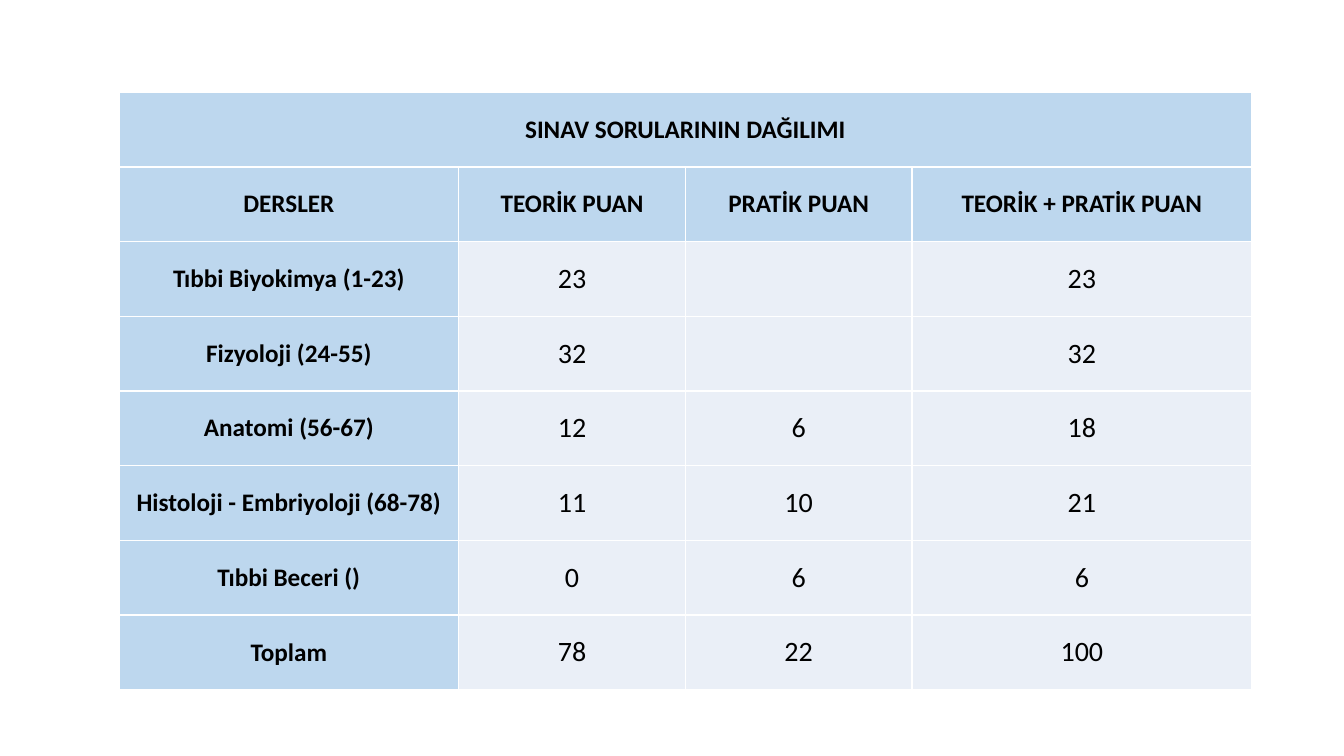
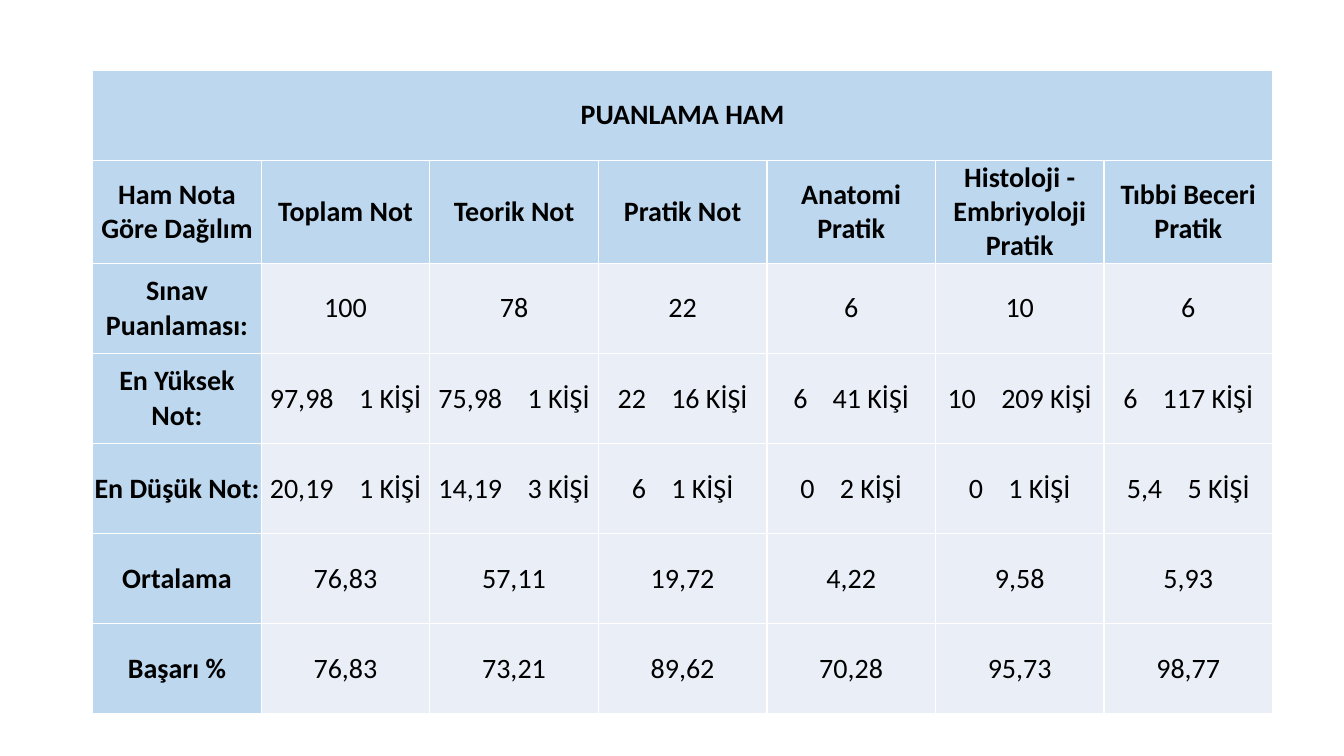
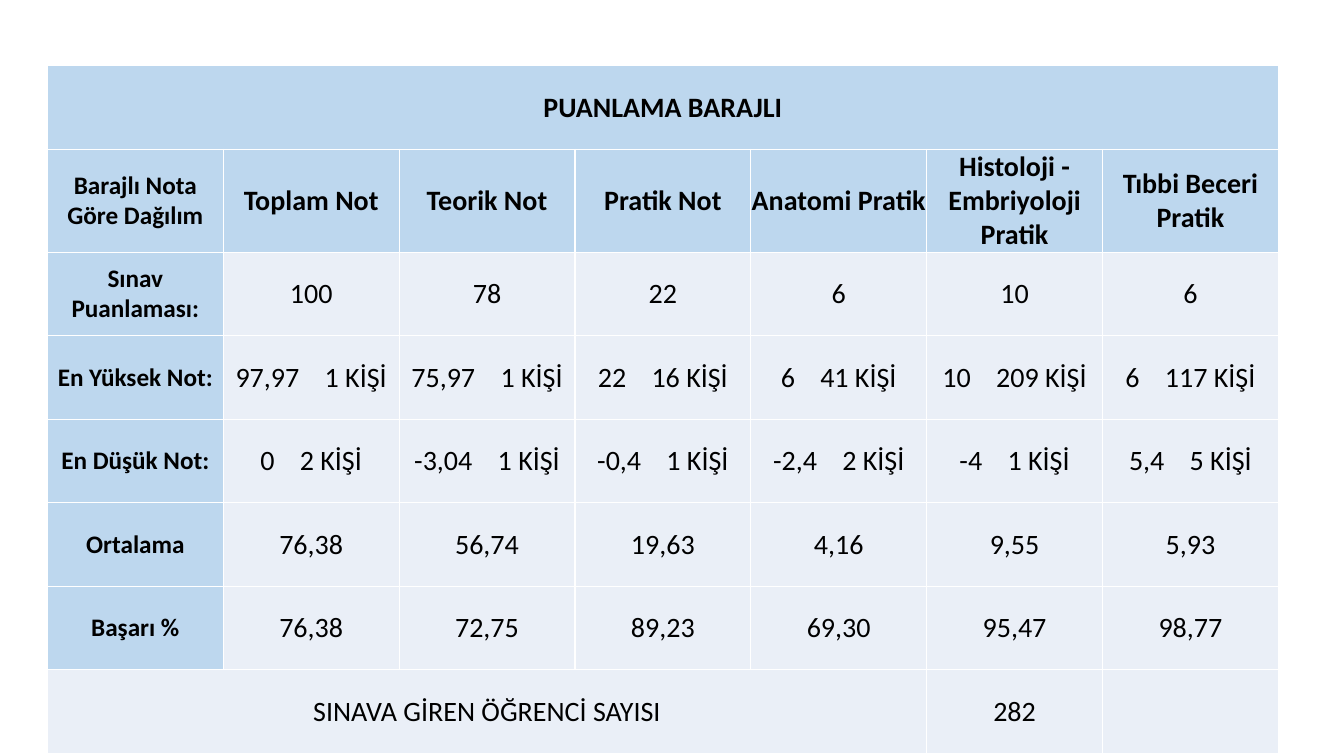
from lxml import etree
from pptx import Presentation
from pptx import util as u
from pptx.dml.color import RGBColor
from pptx.enum import text
from pptx.oxml.ns import qn

INK = {"head": "BDD7EE", "body": "EAEFF7", "text": "000000", "rule": "FFFFFF"}
NOTES = ["Toplam Not", "Teorik Not", "Pratik Not", "Anatomi Pratik",
         "Histoloji - Embriyoloji Pratik", "Tıbbi Beceri Pratik"]
POINTS = ["Sınav Puanlaması:", "100", "78", "22", "6", "10", "6"]


class Deck:
    """Holds the style and the current slide; lengths are percent of the slide."""
    font = "Calibri"
    body = 20
    gap = 13.5

    def __init__(self, wide, high):
        self.prs = Presentation()
        self.prs.slide_width = u.Inches(wide)
        self.prs.slide_height = u.Inches(high)

    def x(self, share):
        return round(self.prs.slide_width * share / 100)

    def y(self, share):
        return round(self.prs.slide_height * share / 100)

    def page(self):
        self.slide = self.prs.slides.add_slide(self.prs.slide_layouts[6])

    def run(self, par, words, size, bold):
        run = par.add_run()
        run.text = words
        font = run.font
        font.name, font.size, font.bold = self.font, u.Pt(size), bold
        font.color.rgb = RGBColor.from_string(INK["text"])
        return run

    def rules(self, cell):
        props = cell._tc.get_or_add_tcPr()
        for side in ("lnL", "lnR", "lnT", "lnB"):
            line = etree.SubElement(props, qn(f"a:{side}"), w=str(u.Pt(1)))
            fill = etree.SubElement(line, qn("a:solidFill"))
            etree.SubElement(fill, qn("a:srgbClr"), val=INK["rule"])

    def cell(self, cell, value, size, head):
        """Fill one cell; a (mark, count) pair is set with a wide gap between."""
        self.rules(cell)
        cell.fill.solid()
        cell.fill.fore_color.rgb = RGBColor.from_string(INK["head" if head else "body"])
        cell.margin_left = cell.margin_right = cell.margin_top = cell.margin_bottom = 0
        cell.vertical_anchor = text.MSO_ANCHOR.MIDDLE
        par = cell.text_frame.paragraphs[0]
        par.alignment = text.PP_ALIGN.CENTER
        if isinstance(value, tuple):
            mark, count = value
            self.run(par, mark, size, head)
            space = self.run(par, " ", size, head)
            space.font._element.set("spc", str(round(self.gap * 100)))
            self.run(par, f"{count} KİŞİ", size, head)
        elif value:
            self.run(par, value, size, head)

    def table(self, left, top, wide, cols, rows, data, top_size, side_size):
        """cols are weights, rows are heights; None joins a cell to the one before."""
        frame = self.slide.shapes.add_table(
            len(rows), len(cols), self.x(left), self.y(top), self.x(wide), self.y(sum(rows)))
        grid = frame.table
        grid.first_row = grid.horz_banding = False
        for col, part in zip(grid.columns, cols):
            col.width = self.x(wide * part / sum(cols))
        for row, high in zip(grid.rows, rows):
            row.height = self.y(high)
        for r, line in enumerate(data):
            for c, value in enumerate(line):
                side = c == 0 and line[1] is not None
                head = r < 2 or side
                size = side_size if side else top_size if head else self.body
                self.cell(grid.cell(r, c), value, size, head)
            span = line.count(None)
            if span:
                grid.cell(r, 0).merge(grid.cell(r, span))


def title(words, cols):
    return [words] + [None] * (cols - 1)


def main():
    deck = Deck(13.33, 7.5)

    deck.page()
    deck.table(8.85, 12.2, 84.3, [3, 2, 2, 3], [9.88] * 8, [
        title("SINAV SORULARININ DAĞILIMI", 4),
        ["DERSLER", "TEORİK PUAN", "PRATİK PUAN", "TEORİK + PRATİK PUAN"],
        ["Tıbbi Biyokimya (1-23)", "23", "", "23"],
        ["Fizyoloji (24-55)", "32", "", "32"],
        ["Anatomi (56-67)", "12", "6", "18"],
        ["Histoloji - Embriyoloji (68-78)", "11", "10", "21"],
        ["Tıbbi Beceri ()", "0", "6", "6"],
        ["Toplam", "78", "22", "100"],
    ], 18, 18)

    deck.page()
    deck.table(6.9, 9.3, 87.8, [1] * 7, [11.92, 13.6] + [11.92] * 5, [
        title("PUANLAMA HAM", 7),
        ["Ham Nota Göre Dağılım"] + NOTES,
        POINTS,
        ["En Yüksek Not:", ("97,98", 1), ("75,98", 1), ("22", 16),
         ("6", 41), ("10", 209), ("6", 117)],
        ["En Düşük Not:", ("20,19", 1), ("14,19", 3), ("6", 1),
         ("0", 2), ("0", 1), ("5,4", 5)],
        ["Ortalama", "76,83", "57,11", "19,72", "4,22", "9,58", "5,93"],
        ["Başarı %", "76,83", "73,21", "89,62", "70,28", "95,73", "98,77"],
    ], 20, 20)

    deck.page()
    deck.table(3.53, 8.7, 91.6, [1] * 7, [11.05, 13.6] + [11.05] * 6, [
        title("PUANLAMA BARAJLI", 7),
        ["Barajlı Nota Göre Dağılım"] + NOTES,
        POINTS,
        ["En Yüksek Not:", ("97,97", 1), ("75,97", 1), ("22", 16),
         ("6", 41), ("10", 209), ("6", 117)],
        ["En Düşük Not:", ("0", 2), ("-3,04", 1), ("-0,4", 1),
         ("-2,4", 2), ("-4", 1), ("5,4", 5)],
        ["Ortalama", "76,38", "56,74", "19,63", "4,16", "9,55", "5,93"],
        ["Başarı %", "76,38", "72,75", "89,23", "69,30", "95,47", "98,77"],
        title("SINAVA GİREN ÖĞRENCİ SAYISI", 5) + ["282", ""],
    ], 20, 18)

    deck.prs.save("out.pptx")


if __name__ == "__main__":
    main()
